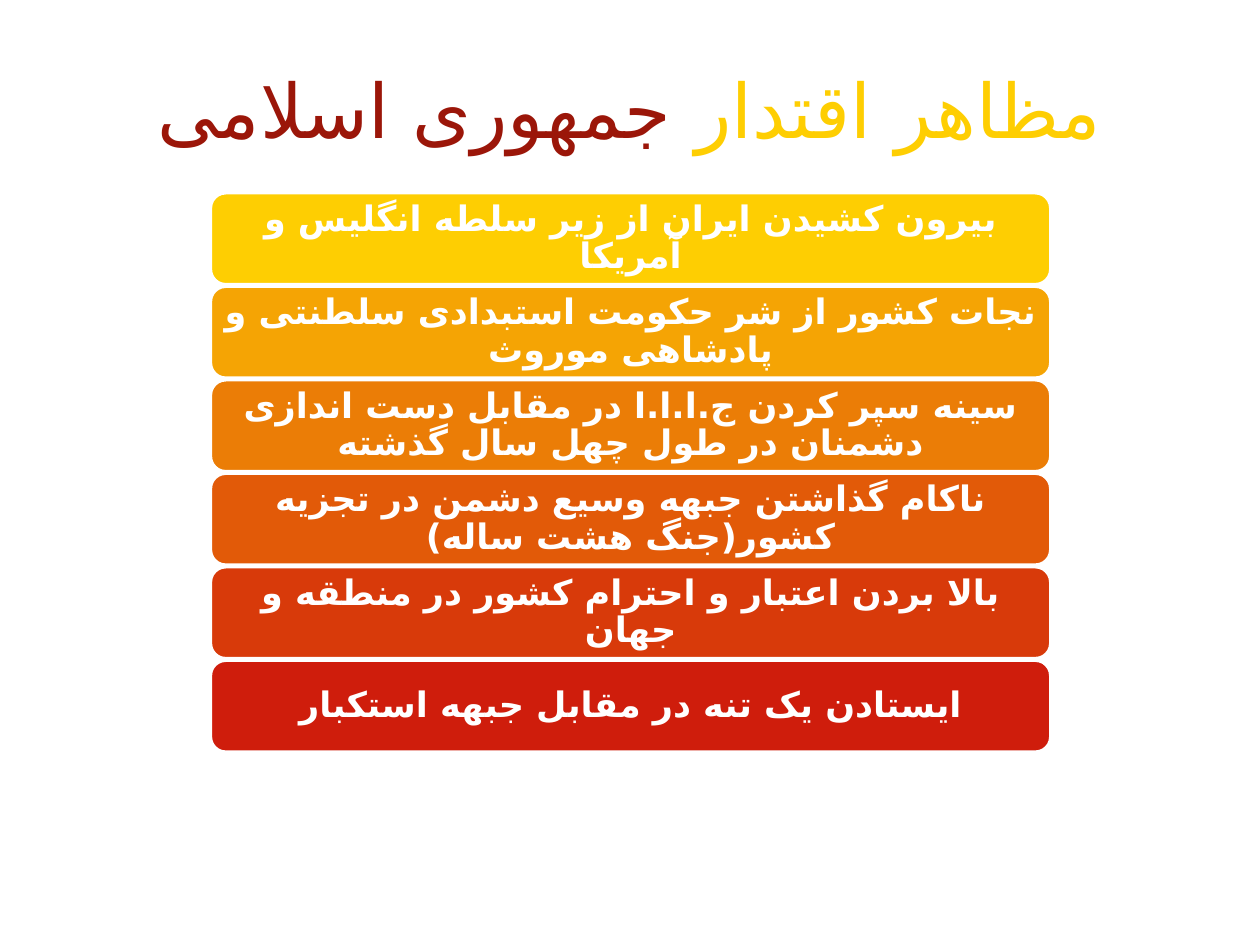
from lxml.etree import SubElement
from pptx import Presentation
from pptx.dml.color import RGBColor
from pptx.enum.shapes import MSO_SHAPE
from pptx.enum.text import MSO_ANCHOR, PP_ALIGN
from pptx.oxml.ns import qn
from pptx.util import Inches, Pt

FONT = "Roboto"
ARABIC_FONT = "DejaVu Sans"  # Roboto has no Arabic letters
COLORS = {
    "white": "FFFFFF",
    "yellow": "FECE02",
    "amber": "F5A404",
    "orange": "EB7D06",
    "rust": "E25A08",
    "vermilion": "D83A0A",
    "red": "CF1D0C",
    "dark_red": "9B1609",
}
TITLE = [("مظاهر اقتدار ", "yellow"), ("جمهوری اسلامی", "dark_red")]
BARS = [
    ("بیرون کشیدن ایران از زیر سلطه انگلیس و آمریکا", "yellow"),
    ("نجات کشور از شر حکومت استبدادی سلطنتی و پادشاهی موروث", "amber"),
    ("سینه سپر کردن ج.ا.ا.ا در مقابل دست اندازی دشمنان در طول چهل سال گذشته", "orange"),
    ("ناکام گذاشتن جبهه وسیع دشمن در تجزیه کشور(جنگ هشت ساله)", "rust"),
    ("بالا بردن اعتبار و احترام کشور در منطقه و جهان", "vermilion"),
    ("ایستادن یک تنه در مقابل جبهه استکبار", "red"),
]
BAR_LEFT, BAR_TOP, BAR_WIDTH, BAR_HEIGHT = 1.67, 1.53, 6.67, 0.73
BAR_PITCH = 0.742


def rgb(name):
    return RGBColor.from_string(COLORS[name])


def set_frame(tf, inset):
    tf.word_wrap = True
    tf.vertical_anchor = MSO_ANCHOR.MIDDLE
    tf.margin_left = tf.margin_right = Inches(inset)
    tf.margin_top = tf.margin_bottom = Inches(inset)


def format_rtl(p, size):
    """Centre a right-to-left paragraph and set its Latin and Arabic font."""
    p.alignment = PP_ALIGN.CENTER
    p.font.size = Pt(size)
    p.font.name = FONT
    pPr = p._p.get_or_add_pPr()
    pPr.set("rtl", "1")
    SubElement(pPr.find(qn("a:defRPr")), qn("a:cs"), typeface=ARABIC_FONT)


def add_title(slide):
    box = slide.shapes.add_textbox(Inches(0.42), Inches(0.5), Inches(9.15), Inches(0.72))
    tf = box.text_frame
    set_frame(tf, 0)
    p = tf.paragraphs[0]
    format_rtl(p, 43)
    for text, color in TITLE:
        r = p.add_run()
        r.text = text
        r.font.color.rgb = rgb(color)


def add_bar(slide, top, text, color):
    sp = slide.shapes.add_shape(MSO_SHAPE.ROUNDED_RECTANGLE, Inches(BAR_LEFT), Inches(top),
                                Inches(BAR_WIDTH), Inches(BAR_HEIGHT))
    sp.shadow.inherit = False
    sp.fill.solid()
    sp.fill.fore_color.rgb = rgb(color)
    sp.line.color.rgb = rgb("white")
    sp.line.width = Pt(2)
    set_frame(sp.text_frame, 0.04)
    p = sp.text_frame.paragraphs[0]
    p.text = text
    p.line_spacing = 0.9
    p.space_after = Pt(7)
    p.font.bold = True
    p.font.color.rgb = rgb("white")
    format_rtl(p, 20)


def main():
    prs = Presentation()
    prs.slide_width, prs.slide_height = Inches(10), Inches(7.5)
    slide = prs.slides.add_slide(prs.slide_layouts[6])
    add_title(slide)
    for i, (text, color) in enumerate(BARS):
        add_bar(slide, BAR_TOP + i * BAR_PITCH, text, color)
    prs.save("out.pptx")


if __name__ == "__main__":
    main()
